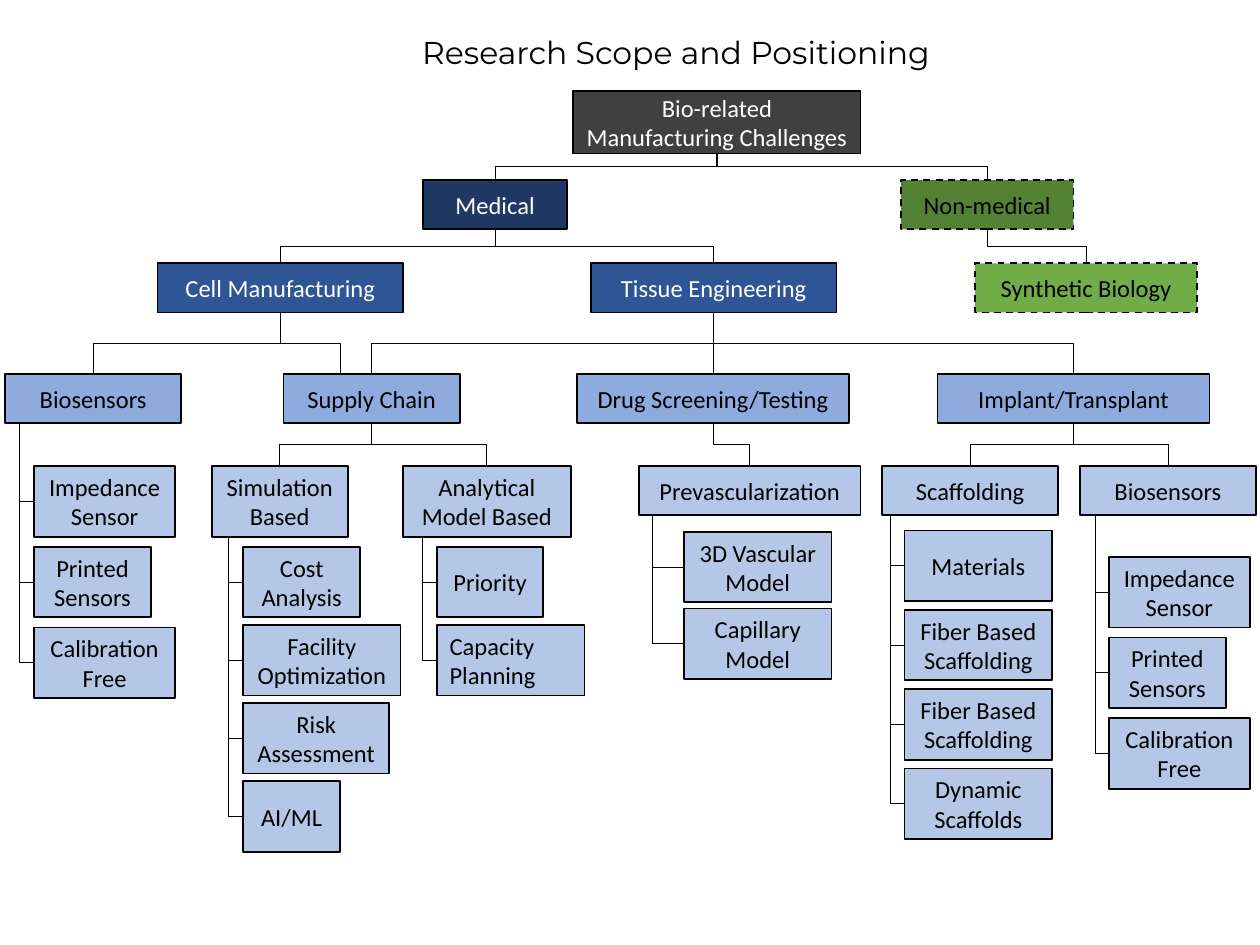
"""Build a one-slide tree of research scope and positioning."""
from dataclasses import dataclass

from lxml import etree
from pptx import Presentation
from pptx import util as u
from pptx.dml.color import RGBColor
from pptx.enum import dml, shapes, text
from pptx.oxml.ns import qn


@dataclass(frozen=True)
class Theme:
    """Colours, fonts and sizes of the slide."""
    black: str = "000000"
    white: str = "FFFFFF"
    title_font: str = "Montserrat"
    body_font: str = "Calibri"
    title_size: float = 18
    body_size: float = 14
    outline: float = 1
    link: float = 0.5


T = Theme()
TITLE = "Research Scope and Positioning"
STYLES = {
    "root": ("404040", T.white, False),
    "medical": ("203864", T.white, False),
    "field": ("2F5597", T.white, False),
    "area": ("8FAADC", T.black, False),
    "topic": ("B4C7E7", T.black, False),
    "other": ("548235", T.black, True),
    "other field": ("70AD47", T.black, True),
}
ROW_TOPS = (0.72, 1.43, 2.09, 2.97, 3.7)
LOW, TALL = 0.39, 0.56

# key: (label, style, row, left, width, height)
NODES = {
    "root": ("Bio-related Manufacturing Challenges", "root", 0, 4.55, 2.28, 0.5),
    "medical": ("Medical", "medical", 1, 3.36, 1.14, LOW),
    "other": ("Non-medical", "other", 1, 7.15, 1.37, LOW),
    "cell": ("Cell Manufacturing", "field", 2, 1.25, 1.95, LOW),
    "tissue": ("Tissue Engineering", "field", 2, 4.69, 1.95, LOW),
    "synthetic": ("Synthetic Biology", "other field", 2, 7.74, 1.76, LOW),
    "sensors": ("Biosensors", "area", 3, 0.04, 1.4, LOW),
    "supply": ("Supply Chain", "area", 3, 2.25, 1.4, LOW),
    "drug": ("Drug Screening/Testing", "area", 3, 4.58, 2.16, LOW),
    "implant": ("Implant/Transplant", "area", 3, 7.44, 2.16, LOW),
    "simulation": ("Simulation Based", "topic", 4, 1.68, 1.08, TALL),
    "analytical": ("Analytical Model Based", "topic", 4, 3.2, 1.33, TALL),
    "vascular": ("Prevascularization", "topic", 4, 5.07, 1.76, LOW),
    "scaffolding": ("Scaffolding", "topic", 4, 7, 1.4, LOW),
    "implant sensors": ("Biosensors", "topic", 4, 8.57, 1.4, LOW),
}
BRANCHES = {
    "root": ("medical", "other"),
    "medical": ("cell", "tissue"),
    "other": ("synthetic",),
    "cell": ("sensors", "supply"),
    "tissue": ("supply", "drug", "implant"),
    "supply": ("simulation", "analytical"),
    "drug": ("vascular",),
    "implant": ("scaffolding", "implant sensors"),
}
OFF_CENTRE = {("cell", "supply"): 0.32}
SENSORS = (("Impedance Sensor", 1.12), ("Printed Sensors", 0.93), ("Calibration Free", 1.12))

# parent: (left, first top, step, gap to rail, ((label, width), ...))
LISTS = {
    "sensors": (0.27, 3.7, 0.64, 0.12, SENSORS),
    "simulation": (1.93, 4.34, 0.62, 0.12, (
        ("Cost Analysis", 0.93), ("Facility Optimization", 1.25),
        ("Risk Assessment", 1.16), ("AI/ML", 0.77))),
    "analytical": (3.47, 4.34, 0.62, 0.12, (("Priority", 0.84), ("Capacity Planning", 1.17))),
    "vascular": (5.43, 4.22, 0.61, 0.25, (("3D Vascular Model", 1.17), ("Capillary Model", 1.17))),
    "scaffolding": (7.18, 4.21, 0.63, 0.11, (
        ("Materials", 1.17), ("Fiber Based Scaffolding", 1.17),
        ("Fiber Based Scaffolding", 1.17), ("Dynamic Scaffolds", 1.17))),
    "implant sensors": (8.8, 4.42, 0.64, 0.11, SENSORS),
}
LEFT_ALIGNED = {"Capacity Planning"}


def style_text(tf, font, size, color, align):
    p = tf.paragraphs[0]
    p.alignment = align
    for r in p.runs:
        r.font.name, r.font.size = font, u.Pt(size)
        r.font.color.rgb = RGBColor.from_string(color)


def set_line(line, width):
    line.color.rgb = RGBColor.from_string(T.black)
    line.width = u.Pt(width)


def add_title(s):
    sp = s.shapes.title
    sp.left, sp.top, sp.width, sp.height = map(u.Inches, (3.25, 0.21, 4.65, 0.4))
    tf = sp.text_frame
    tf.text = TITLE
    tf.word_wrap = False
    tf.auto_size = text.MSO_AUTO_SIZE.SHAPE_TO_FIT_TEXT
    tf.vertical_anchor = text.MSO_ANCHOR.TOP
    style_text(tf, T.title_font, T.title_size, T.black, text.PP_ALIGN.LEFT)


def add_box(s, label, style, left, top, width, height):
    fill, color, dashed = STYLES[style]
    sp = s.shapes.add_shape(shapes.MSO_SHAPE.RECTANGLE,
                            *map(u.Inches, (left, top, width, height)))
    sp.shadow.inherit = False
    sp.fill.solid()
    sp.fill.fore_color.rgb = RGBColor.from_string(fill)
    set_line(sp.line, T.outline)
    if dashed:
        sp.line.dash_style = dml.MSO_LINE.DASH
    tf = sp.text_frame
    tf.text = label
    tf.word_wrap = True
    tf.vertical_anchor = text.MSO_ANCHOR.MIDDLE
    align = text.PP_ALIGN.LEFT if label in LEFT_ALIGNED else text.PP_ALIGN.CENTER
    style_text(tf, T.body_font, T.body_size, color, align)
    return sp


def add_link(s, parent, child, rail_gap=None, share=0.5):
    """Link a parent's bottom to a child's top, or to its left side by a rail."""
    x1, y1 = parent.left + parent.width // 2, parent.top + parent.height
    if rail_gap is None:
        x2, y2, site = child.left + int(child.width * share), child.top, 0
        preset, adjusts = "bentConnector3", {"adj1": 0.5}
    else:
        x2, y2, site = child.left, child.top + child.height // 2, 1
        preset = "bentConnector4"
        adjusts = {"adj1": 0, "adj2": 1 + u.Inches(rail_gap) / (x1 - x2)}
    c = s.shapes.add_connector(shapes.MSO_CONNECTOR.ELBOW, x1, y1, x2, y2)
    c.begin_connect(parent, 2)
    if share == 0.5:
        c.end_connect(child, site)
    length, breadth = y2 - y1, abs(x2 - x1)
    xfrm = c._element.spPr.find(qn("a:xfrm"))
    xfrm.attrib.clear()
    xfrm.set("rot", "16200000" if x2 > x1 else "5400000")
    if x2 > x1:
        xfrm.set("flipH", "1")
    c.left, c.top = (x1 + x2 - length) // 2, (y1 + y2 - breadth) // 2
    c.width, c.height = length, breadth
    geom = c._element.spPr.find(qn("a:prstGeom"))
    geom.set("prst", preset)
    guides = geom.find(qn("a:avLst"))
    for name, value in adjusts.items():
        etree.SubElement(guides, qn("a:gd"), name=name, fmla=f"val {round(value * 100000)}")
    set_line(c.line, T.link)
    etree.SubElement(c._element.spPr, qn("a:effectLst"))


def main():
    prs = Presentation()
    prs.slide_width, prs.slide_height = u.Inches(10), u.Inches(7.5)
    s = prs.slides.add_slide(prs.slide_layouts[5])
    add_title(s)
    boxes = {key: add_box(s, label, style, left, ROW_TOPS[row], width, height)
             for key, (label, style, row, left, width, height) in NODES.items()}
    for parent, children in BRANCHES.items():
        for child in children:
            add_link(s, boxes[parent], boxes[child], share=OFF_CENTRE.get((parent, child), 0.5))
    for parent, (left, top, step, gap, items) in LISTS.items():
        for i, (label, width) in enumerate(items):
            sp = add_box(s, label, "topic", left, top + i * step, width, TALL)
            add_link(s, boxes[parent], sp, rail_gap=gap)
    prs.save("out.pptx")


if __name__ == "__main__":
    main()
